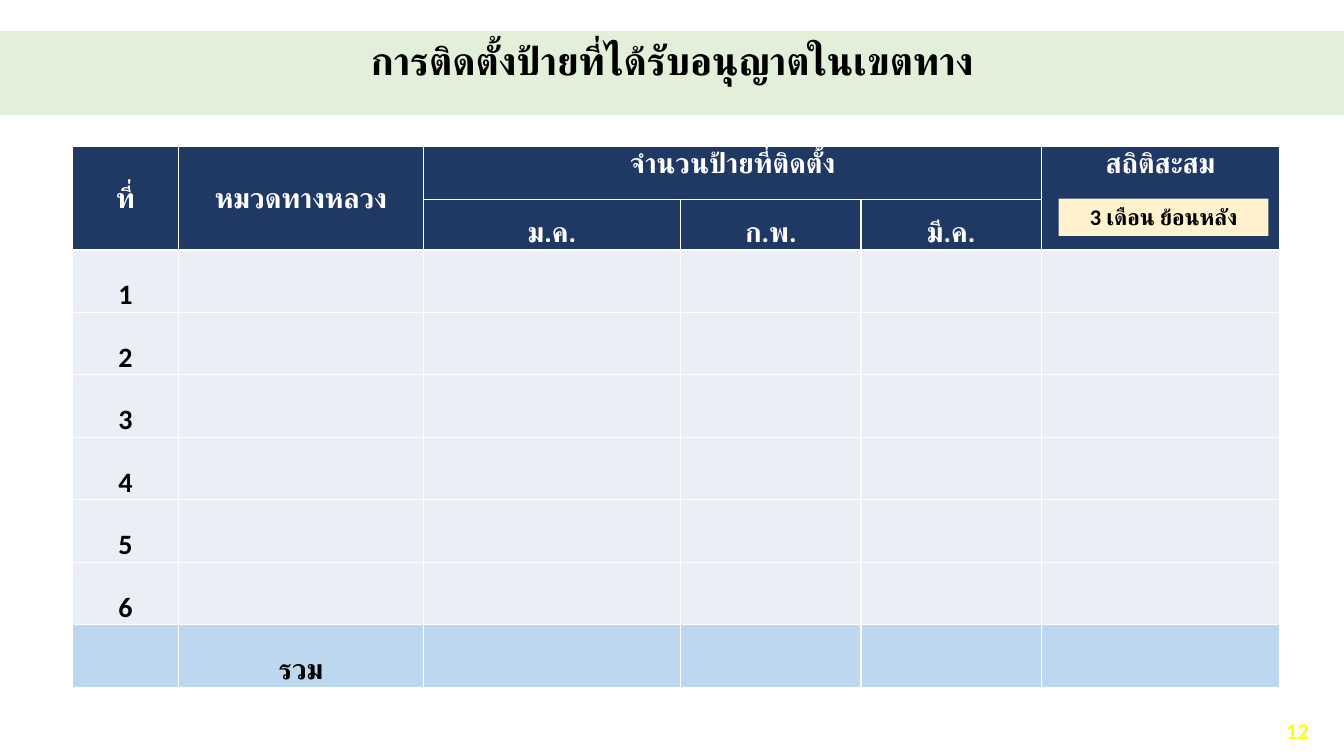
from dataclasses import dataclass

from lxml import etree
from pptx import Presentation
from pptx import util as u
from pptx.dml.color import RGBColor
from pptx.enum import text
from pptx.oxml import ns


@dataclass(frozen=True)
class Theme:
    """Colours, font and type sizes of the slide."""
    font: str = "Calibri"
    black: str = "000000"
    white: str = "FFFFFF"
    header: str = "203864"
    body: str = "EAEFF7"
    total: str = "BDD7EE"
    band: str = "E2F0D9"
    badge: str = "FFF2CC"
    number: str = "FFFF00"
    title_size: int = 28
    table_size: int = 20
    small_size: int = 16


THEME = Theme()
TOP, MIDDLE, BOTTOM = (text.MSO_ANCHOR.TOP, text.MSO_ANCHOR.MIDDLE,
                       text.MSO_ANCHOR.BOTTOM)
COLUMNS = [1.05, 2.43, 2.55, 1.79, 1.79, 2.36]
ROWS = [0.53, 0.5] + [0.62] * 7
TOTAL_ROW = len(ROWS) - 1
HEADER_MERGES = [(0, 0, 1, 0), (0, 1, 1, 1), (0, 2, 0, 4), (0, 5, 1, 5)]
HEADINGS = [
    (0, 0, "ที่", MIDDLE),
    (0, 1, "หมวดทางหลวง", MIDDLE),
    (0, 2, "จำนวนป้ายที่ติดตั้ง", TOP),
    (0, 5, "สถิติสะสม", TOP),
    (1, 2, "ม.ค.", BOTTOM),
    (1, 3, "ก.พ.", BOTTOM),
    (1, 4, "มี.ค.", BOTTOM),
]


def write(tf, words, size, color=THEME.black, align=text.PP_ALIGN.CENTER):
    """Write one bold paragraph into a text frame."""
    p = tf.paragraphs[0]
    p.alignment = align
    r = p.add_run()
    r.text = words
    r.font.size = u.Pt(size)
    r.font.bold = True
    r.font.color.rgb = RGBColor.from_string(color)
    r.font.name = THEME.font
    cs = etree.SubElement(r.font._element, ns.qn("a:cs"))
    cs.set("typeface", THEME.font)


def paint(target, color):
    """Give a shape or cell a solid fill."""
    target.fill.solid()
    target.fill.fore_color.rgb = RGBColor.from_string(color)


def place(sp, box):
    """Move a shape to a box given in inches."""
    sp.left, sp.top, sp.width, sp.height = map(u.Inches, box)


def outline(cell):
    """Draw thin white borders around a cell."""
    tcPr = cell._tc.get_or_add_tcPr()
    for side in ("lnL", "lnR", "lnT", "lnB"):
        ln = etree.SubElement(tcPr, ns.qn(f"a:{side}"), w=str(u.Pt(1)))
        fill = etree.SubElement(ln, ns.qn("a:solidFill"))
        etree.SubElement(fill, ns.qn("a:srgbClr"), val=THEME.white)


def add_title(s, box):
    """Set the title on a full-width band."""
    sp = s.shapes.title
    place(sp, box)
    paint(sp, THEME.band)
    tf = sp.text_frame
    tf.vertical_anchor = TOP
    tf.auto_size = text.MSO_AUTO_SIZE.SHAPE_TO_FIT_TEXT
    write(tf, "การติดตั้งป้ายที่ได้รับอนุญาตในเขตทาง", THEME.title_size)


def fill_cell(cell, words, anchor, color=THEME.black):
    """Write a label into a table cell."""
    cell.vertical_anchor = anchor
    cell.margin_left = cell.margin_right = cell.margin_top = u.Inches(0.01)
    cell.margin_bottom = 0
    write(cell.text_frame, words, THEME.table_size, color)


def add_sign_table(s, box):
    """Add the table of installed signs and the badge in its last heading."""
    frame = s.shapes.add_table(len(ROWS), len(COLUMNS), *map(u.Inches, box))
    table = frame.table
    table.first_row = table.horz_banding = False
    for column, width in zip(table.columns, COLUMNS):
        column.width = u.Inches(width)
    for i, (row, height) in enumerate(zip(table.rows, ROWS)):
        row.height = u.Inches(height)
        color = (THEME.header if i < 2
                 else THEME.total if i == TOTAL_ROW else THEME.body)
        for cell in row.cells:
            outline(cell)
            paint(cell, color)
    for top, left, bottom, right in HEADER_MERGES:
        table.cell(top, left).merge(table.cell(bottom, right))
    for row, column, words, anchor in HEADINGS:
        fill_cell(table.cell(row, column), words, anchor, THEME.white)
    for row in range(2, TOTAL_ROW):
        fill_cell(table.cell(row, 0), str(row - 1), BOTTOM)
    fill_cell(table.cell(TOTAL_ROW, 1), "รวม", BOTTOM)
    left, top = box[:2]
    add_badge(s, (left + 9.78, top + 0.52, 2.08, 0.37))


def add_badge(s, box):
    """Add the label naming the period of the statistics."""
    sp = s.shapes.add_textbox(*map(u.Inches, box))
    paint(sp, THEME.badge)
    tf = sp.text_frame
    tf.word_wrap = True
    tf.auto_size = text.MSO_AUTO_SIZE.SHAPE_TO_FIT_TEXT
    write(tf, "3 เดือน ย้อนหลัง", THEME.small_size)


def add_page_number(s, box):
    """Add the page number at the lower right."""
    tf = s.shapes.add_textbox(*map(u.Inches, box)).text_frame
    tf.word_wrap = True
    tf.vertical_anchor = MIDDLE
    write(tf, "12", THEME.small_size, THEME.number, text.PP_ALIGN.RIGHT)


def main():
    """Build and save the slide."""
    prs = Presentation()
    prs.slide_width, prs.slide_height = u.Inches(13.33), u.Inches(7.5)
    s = prs.slides.add_slide(prs.slide_layouts[5])
    add_title(s, (0, 0.31, 13.33, 0.57))
    add_sign_table(s, (0.72, 1.45, sum(COLUMNS), sum(ROWS)))
    add_page_number(s, (10.5, 7.05, 2.58, 0.4))
    prs.save("out.pptx")


if __name__ == "__main__":
    main()
